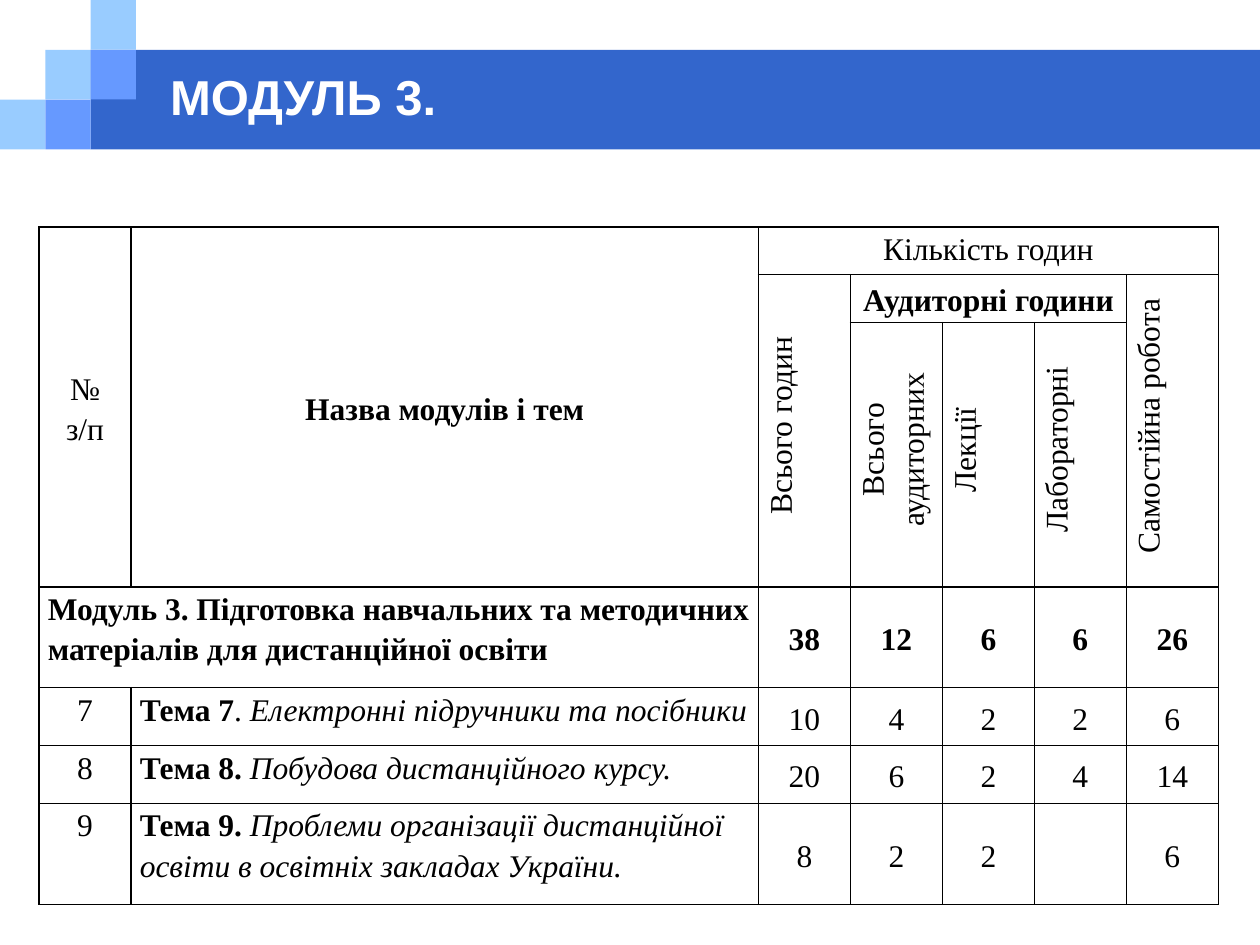
from dataclasses import dataclass

from lxml import etree
from pptx import Presentation
from pptx import util as u
from pptx.dml.color import RGBColor
from pptx.enum import shapes, text
from pptx.oxml import ns


@dataclass(frozen=True)
class Theme:
    bar: str = "3366CC"
    pale: str = "99CCFF"
    mid: str = "6699FF"
    ink: str = "000000"
    white: str = "FFFFFF"
    head: str = "Arial"
    body: str = "Times New Roman"
    big: int = 28
    size: int = 18


T = Theme()
WIDE, HIGH = 10, 7.5
STEP, RISE = 0.36, 0.395
COLS = [0.73, 4.98] + [0.73] * 5
ROWS = [0.38, 0.38, 1.88, 0.8, 0.46, 0.46, 0.8]
MID = text.MSO_ANCHOR.MIDDLE
TOP = text.MSO_ANCHOR.TOP
LEFT = text.PP_ALIGN.LEFT
MAIN = text.PP_ALIGN.CENTER

HEADS = [
    (0, 0, 2, 0, "№ з/п", {}),
    (0, 1, 2, 1, "Назва модулів і тем", {"bold": True}),
    (0, 2, 0, 6, "Кількість годин", {"anchor": TOP}),
    (1, 2, 2, 2, "Всього годин", {"turn": True}),
    (1, 3, 1, 5, "Аудиторні години", {"bold": True}),
    (1, 6, 2, 6, "Самостійна робота", {"turn": True}),
    (2, 3, 2, 3, "Всього аудиторних", {"turn": True}),
    (2, 4, 2, 4, "Лекції", {"turn": True}),
    (2, 5, 2, 5, "Лабораторні", {"turn": True}),
]
MODULE = "Модуль 3. Підготовка навчальних та методичних матеріалів для дистанційної освіти"
SUMS = ["38", "12", "6", "6", "26"]
TOPICS = [
    ("7", [("Тема 7", "b"), (". ", ""), ("Електронні підручники та посібники", "i")],
     ["10", "4", "2", "2", "6"]),
    ("8", [("Тема 8. ", "b"), ("Побудова дистанційного курсу.", "i")],
     ["20", "6", "2", "4", "14"]),
    ("9", [("Тема 9. ", "b"),
           ("Проблеми організації дистанційної освіти в освітніх закладах України.", "i")],
     ["8", "2", "2", "", "6"]),
]


def write(frame, runs, font=T.body, size=T.size, color=T.ink, bold=False,
          align=MAIN, space=1.15):
    if isinstance(runs, str):
        runs = [(runs, "b" if bold else "")]
    para = frame.paragraphs[0]
    para.alignment = align
    para.line_spacing = space
    for words, style in runs:
        run = para.add_run()
        run.text = words
        run.font.name = font
        run.font.size = u.Pt(size)
        run.font.bold = style == "b"
        run.font.italic = style == "i"
        run.font.color.rgb = RGBColor.from_string(color)
    return para


def block(slide, col, row, color, wide=STEP, tall=1):
    box = slide.shapes.add_shape(
        shapes.MSO_SHAPE.RECTANGLE, u.Inches(col * STEP), u.Inches(row * RISE),
        u.Inches(wide), u.Inches(tall * RISE))
    box.shadow.inherit = False
    box.fill.solid()
    box.fill.fore_color.rgb = RGBColor.from_string(color)
    box.line.fill.background()


def title(slide, words):
    box = slide.shapes.title
    slide.shapes._spTree.append(box._element)
    box.left, box.top = u.Inches(0.125 * WIDE), u.Inches(0.5)
    box.width, box.height = u.Inches(8.08), u.Inches(0.53)
    box.text_frame.vertical_anchor = MID
    write(box.text_frame, words, font=T.head, size=T.big, color=T.white,
          bold=True, align=LEFT, space=1)


def edge(cell):
    cell.fill.background()
    props = cell._tc.get_or_add_tcPr()
    for spot, side in enumerate(("lnL", "lnR", "lnT", "lnB")):
        line = etree.Element(ns.qn("a:" + side), w=str(u.Pt(1)))
        fill = etree.SubElement(line, ns.qn("a:solidFill"))
        etree.SubElement(fill, ns.qn("a:srgbClr"), val=T.ink)
        props.insert(spot, line)


def put(cell, runs, anchor=MID, turn=False, **form):
    cell.vertical_anchor = anchor
    para = write(cell.text_frame, runs, **form)
    if turn:
        cell._tc.get_or_add_tcPr().set("vert", "vert270")
        para._p.get_or_add_pPr().set("marL", str(u.Inches(0.08)))


def grid(slide):
    frame = slide.shapes.add_table(
        len(ROWS), len(COLS), u.Inches(0.31), u.Inches(0.24 * HIGH),
        u.Inches(sum(COLS)), u.Inches(sum(ROWS)))
    table = frame.table
    table.first_row = table.horz_banding = False
    for col, wide in zip(table.columns, COLS):
        col.width = u.Inches(wide)
    for row, tall in zip(table.rows, ROWS):
        row.height = u.Inches(tall)
    for cell in table.iter_cells():
        cell.margin_left = cell.margin_right = u.Inches(0.07)
        cell.margin_top = cell.margin_bottom = 0
        edge(cell)
    return table


def hours(table, row, nums, bold=False):
    for col, num in enumerate(nums, 2):
        if num:
            put(table.cell(row, col), num, bold=bold)


def fill(table):
    for row, col, last, end, words, form in HEADS:
        cell = table.cell(row, col)
        if (row, col) != (last, end):
            cell.merge(table.cell(last, end))
        put(cell, words, **form)
    table.cell(3, 0).merge(table.cell(3, 1))
    put(table.cell(3, 0), MODULE, anchor=TOP, align=LEFT, bold=True)
    hours(table, 3, SUMS, bold=True)
    for row, (num, name, nums) in enumerate(TOPICS, 4):
        put(table.cell(row, 0), num, anchor=TOP)
        put(table.cell(row, 1), name, anchor=TOP, align=LEFT)
        hours(table, row, nums)


def main():
    deck = Presentation()
    deck.slide_width, deck.slide_height = u.Inches(WIDE), u.Inches(HIGH)
    slide = deck.slides.add_slide(deck.slide_layouts[5])
    block(slide, 2, 1, T.bar, wide=WIDE - 2 * STEP, tall=2)
    for col in range(3):
        block(slide, col, 2 - col, T.pale)
    for col in (1, 2):
        block(slide, col, 3 - col, T.mid)
    title(slide, "МОДУЛЬ 3.")
    fill(grid(slide))
    deck.save("out.pptx")


if __name__ == "__main__":
    main()
